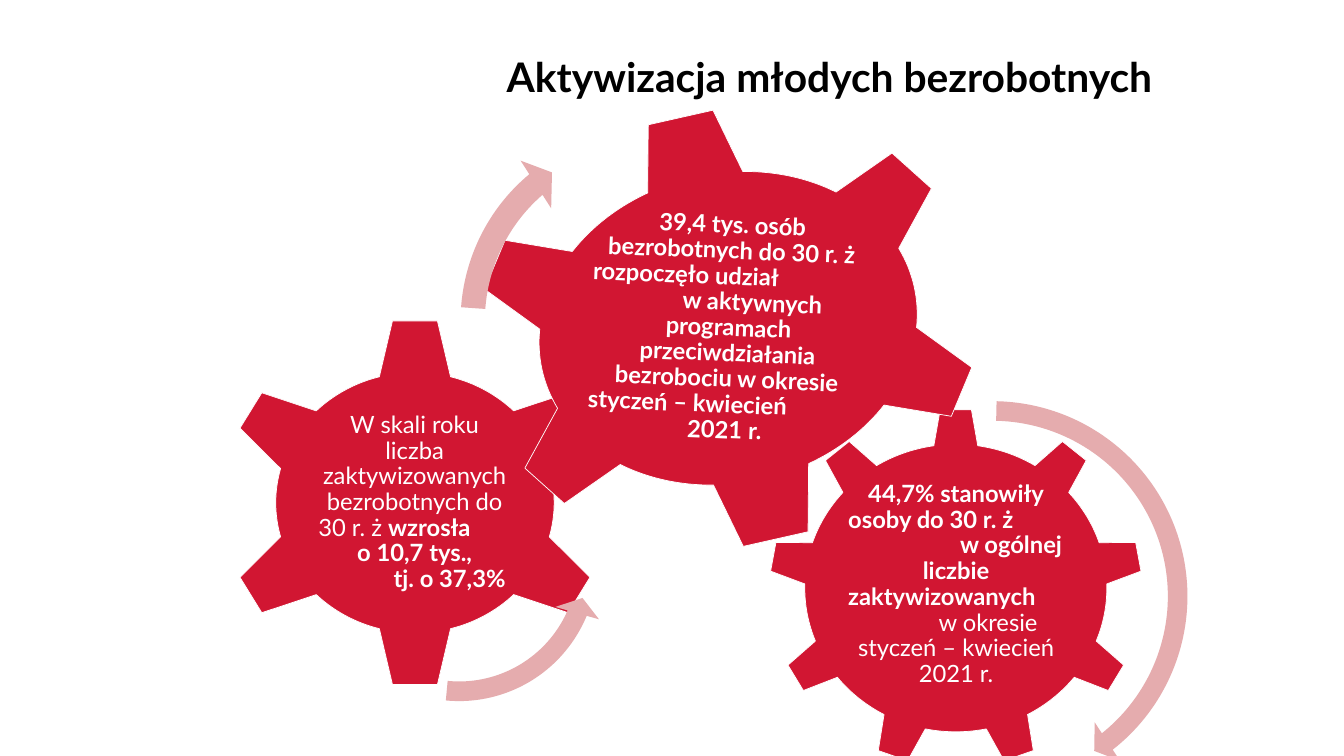
from pptx import Presentation, util as u
from pptx.dml.color import RGBColor
from pptx.enum import shapes, text

THEME = {
    "font": "Lato",
    "title_size": 48,
    "body_size": 28,
    "ink": "000000",
    "paper": "FFFFFF",
    "gear": "D11632",
    "arrow": "E5ACAE",
    "outline": 0.85,
    "inset": 0.1,
}
SHAPE = shapes.MSO_SHAPE
LEFT, CENTER = text.PP_ALIGN.LEFT, text.PP_ALIGN.CENTER

SLIDE_SIZE = (55.85, 31.42)
TITLE = ("Aktywizacja młodych bezrobotnych", (17.55, 2.16, 33.86, 3.12))

# Line: regular words, bold words, alignment, left indent
SHARE_LINES = [
    ("", "44,7% stanowiły", CENTER, 0),
    ("", "osoby do 30 r. ż", LEFT, 0.12),
    ("", "w ogólnej", CENTER, 4.57),
    ("", "liczbie", CENTER, 0),
    ("", "zaktywizowanych", LEFT, 0.12),
    ("w okresie", "", CENTER, 2.66),
    ("styczeń – kwiecień", "", CENTER, 0),
    ("2021 r.", "", CENTER, 0),
]
GROWTH_LINES = [
    ("W skali roku", "", CENTER, 0),
    ("liczba", "", CENTER, 0),
    ("zaktywizowanych", "", CENTER, 0),
    ("bezrobotnych do", "", CENTER, 0),
    ("30 r. ż ", "wzrosła", LEFT, 0),
    ("", "o 10,7 tys.,", CENTER, 0),
    ("", "tj. o 37,3%", CENTER, 2.9),
]
TOTAL_LINES = [
    ("", "39,4 tys. osób", CENTER, 0),
    ("", "bezrobotnych do 30 r. ż", CENTER, 0),
    ("", "rozpoczęło udział", LEFT, 0),
    ("", "w aktywnych", CENTER, 1.9),
    ("", "programach", CENTER, 0),
    ("", "przeciwdziałania", CENTER, 0),
    ("", "bezrobociu w okresie", CENTER, 0),
    ("", "styczeń – kwiecień", LEFT, 0),
    ("", "2021 r.", CENTER, 0),
]
GEARS = [
    (SHAPE.GEAR_9, (31.95, 16.97, 15.54, 14.94), 0,
     (35.03, 20.47, 9.4, 7.67), 0, SHARE_LINES),
    (SHAPE.GEAR_6, (9.14, 13.16, 16.21, 15.47), 0,
     (13.13, 17.09, 8.2, 7.62), 0, GROWTH_LINES),
    (SHAPE.GEAR_6, (19.58, 4.45, 21.36, 18.39), 347.3,
     (24.46, 8.31, 11.63, 10.67), 2.3, TOTAL_LINES),
]
ARROWS = [
    (SHAPE.CIRCULAR_ARROW, (32.59, 16.13, 17.3, 17.3), 8.8,
     (4.7, 299, 2572.1, 15745.7, 5.5)),
    (SHAPE.LEFT_CIRCULAR_ARROW, (12.8, 17.12, 12.55, 12.55), 208.2,
     (6.5, 430, 10489.1, 14837.8, 7.5)),
    (SHAPE.CIRCULAR_ARROW, (18.47, 4.78, 16.81, 17.07), 8.9,
     (6, 394.1, 13313.8, 10508.2, 7)),
]


def apply(target, values):
    for name, value in values.items():
        setattr(target, name, value)


def color(role):
    return RGBColor.from_string(THEME[role])


def lengths(place):
    return [u.Cm(value) for value in place]


def add_figure(page, kind, place, rotation, fill):
    figure = page.shapes.add_shape(kind, *lengths(place))
    figure.rotation = rotation
    figure.shadow.inherit = False
    figure.fill.solid()
    figure.fill.fore_color.rgb = color(fill)
    return figure


def add_text(page, place, lines, size, ink, inset, anchor, spacing, rotation=0):
    box = page.shapes.add_textbox(*lengths(place))
    box.rotation = rotation
    frame = box.text_frame
    apply(frame, {"word_wrap": True, "vertical_anchor": anchor})
    apply(frame, {f"margin_{side}": u.Cm(inset)
                  for side in ("left", "top", "right", "bottom")})
    for index, (regular, strong, align, indent) in enumerate(lines):
        para = frame.add_paragraph() if index else frame.paragraphs[0]
        apply(para, {"alignment": align, "line_spacing": spacing,
                     "space_before": u.Pt(0), "space_after": u.Pt(0)})
        properties = para._p.get_or_add_pPr()
        properties.set("marL", str(u.Cm(indent)))
        properties.set("indent", "0")
        for words, bold in ((regular, False), (strong, True)):
            if words:
                span = para.add_run()
                span.text = words
                apply(span.font, {"name": THEME["font"], "size": u.Pt(size),
                                  "bold": bold})
                span.font.color.rgb = color(ink)


def main():
    deck = Presentation()
    width, height = lengths(SLIDE_SIZE)
    apply(deck, {"slide_width": width, "slide_height": height})
    page = deck.slides.add_slide(deck.slide_layouts[6])

    heading, place = TITLE
    add_text(page, place, [("", heading, CENTER, 0)], THEME["title_size"],
             "ink", 0, text.MSO_ANCHOR.TOP, 1.0)

    for kind, place, turn, text_place, text_turn, lines in GEARS:
        gear = add_figure(page, kind, place, turn, "gear")
        gear.line.color.rgb = color("paper")
        gear.line.width = u.Pt(THEME["outline"])
        add_text(page, text_place, lines, THEME["body_size"], "paper",
                 THEME["inset"], text.MSO_ANCHOR.MIDDLE, 0.9, text_turn)

    for kind, place, turn, percents in ARROWS:
        arrow = add_figure(page, kind, place, turn, "arrow")
        arrow.line.fill.background()
        for index, percent in enumerate(percents):
            arrow.adjustments[index] = percent / 100

    deck.save("out.pptx")


if __name__ == "__main__":
    main()
